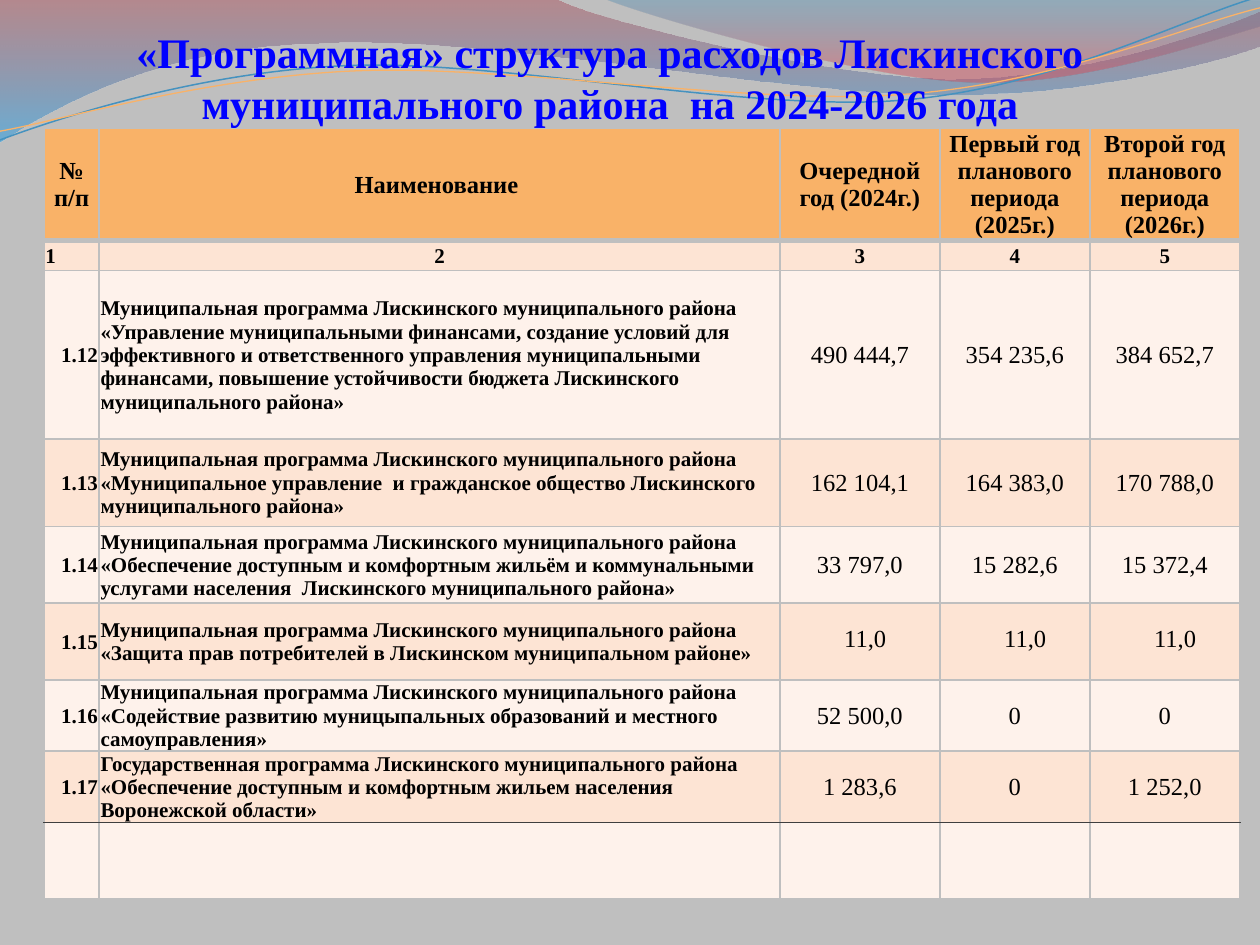
import math

import pptx
import pptx.dml.color
import pptx.enum.text
import pptx.oxml
import pptx.oxml.ns
import pptx.util

Pt = pptx.util.Pt
qn = pptx.oxml.ns.qn
ALIGN = pptx.enum.text.PP_ALIGN
ANCHOR = pptx.enum.text.MSO_ANCHOR
FONT = "Times New Roman"
GREY = "BFBFBF"
DARK = "3F3F3F"
BANDS = ("FDE4D4", "FEF2EB")
COLUMNS = (31.5, 389, 91.4, 85.7, 85.7)
ROWS = (64, 17.3, 96.2, 49.9, 43.9, 43.9, 13.7, 13.7, 43.9)
HEADER = ("№ п/п", "Наименование ", "Очередной год (2024г.)",
          "Первый год планового периода (2025г.)", "Второй год планового периода (2026г.)")
PROGRAM = "Муниципальная программа Лискинского муниципального района "
PROGRAMS = (
    ("1.12", PROGRAM + "«Управление муниципальными финансами, создание условий для эффективного и "
     "ответственного управления муниципальными финансами, повышение устойчивости бюджета "
     "Лискинского муниципального района»", "490 444,7", "354 235,6", "384 652,7"),
    ("1.13", PROGRAM + "«Муниципальное управление  и гражданское общество Лискинского "
     "муниципального района»", "162 104,1", "164 383,0", "170 788,0"),
    ("1.14", PROGRAM + "«Обеспечение доступным и комфортным жильём и коммунальными услугами "
     "населения  Лискинского муниципального района»", "33 797,0", "15 282,6", "15 372,4"),
    ("1.15", PROGRAM + "«Защита прав потребителей в Лискинском муниципальном районе»",
     "11,0", "11,0", "11,0"),
    ("1.16", PROGRAM + "«Содействие развитию муницыпальных образований и местного "
     "самоуправления»", "52 500,0", "0", "0"),
    ("1.17", "Государственная программа Лискинского муниципального района «Обеспечение "
     "доступным и комфортным жильем населения Воронежской области»", "1 283,6", "0", "1 252,0"),
)
BAND_WAVE = [[(0, 0)], [(317, -1)], [(343, 12), (478, 45), (546, 45)],
             [(614, 45), (690, 19), (720, 6.5)], [(721, 26)],
             [(708, 32), (626, 55), (537, 54)], [(448, 54), (275, 20), (185, 24.5)],
             [(93, 26), (33, 60), (-1, 81.5)], [(0, 0)]]
RIGHT_WAVE = [[(345, -1)], [(366, 8), (491, 45), (554, 47)],
              [(616, 50), (692, 23), (720, 15)], [(720, 0)], [(345, -1)]]
BLUE_LINE = [[(0, 80)], [(35, 67), (114, 41), (199, 37.5)],
             [(284, 34), (427, 64), (513, 57.5)], [(600, 51), (675, 11), (718.5, -1.5)]]
ORANGE_LINE = [[(0, 75)], [(34, 69), (118, 44), (204, 40.5)],
               [(290, 37), (430, 60.5), (516, 54)], [(602, 48), (677, 15), (720, 4.5)]]


def rgb(value):
    """Return the colour for a hex string."""
    return pptx.dml.color.RGBColor.from_string(value)


def turn(point, centre, degrees):
    """Turn a point clockwise about a centre."""
    a = math.radians(degrees)
    x, y = point[0] - centre[0], point[1] - centre[1]
    return (centre[0] + x * math.cos(a) - y * math.sin(a),
            centre[1] + x * math.sin(a) + y * math.cos(a))


def add_curve(s, outline, box, close, tilt=0):
    """Draw straight and cubic segments in a box, as a shape with the given tilt."""
    centre = (box[2] / 2, box[3] / 2)
    points = [turn(point, centre, -tilt) for seg in outline for point in seg]
    points = [(Pt(box[0] + x), Pt(box[1] + y)) for x, y in points]
    builder = s.shapes.build_freeform(*points[0])
    builder.add_line_segments(points[1:], close=close)
    sp = builder.convert_to_shape()
    sp.shadow.inherit = False
    sp.rotation = tilt % 360
    lines = iter(list(sp._element.iter(qn("a:lnTo"))))
    for seg in outline[1:]:
        nodes = [next(lines) for _ in seg]
        if len(seg) == 3:
            cubic = nodes[0].makeelement(qn("a:cubicBezTo"), {})
            nodes[0].addprevious(cubic)
            for node in nodes:
                cubic.append(node[0])
                node.getparent().remove(node)
    return sp


def add_waves(s, box):
    """Draw the two translucent waves and the two thin curves."""
    waves = ((BAND_WAVE, ((0, "A84752", 45), (1, "249FE6", 55))),
             (RIGHT_WAVE, ((0, "2A7EAF", 30), (0.8, "D24B5A", 45))))
    for outline, stops in waves:
        sp = add_curve(s, outline, box, True)
        sp.line.fill.background()
        sp.fill.gradient()
        sp.fill.gradient_angle = 270
        for stop, (position, colour, _) in zip(sp.fill.gradient_stops, stops):
            stop.position = position
            stop.color.rgb = rgb(colour)
        for node, (_, _, opacity) in zip(sp._element.iter(qn("a:srgbClr")), stops):
            node.append(node.makeelement(qn("a:alpha"), {"val": str(opacity * 1000)}))
    for outline, colour, width in ((BLUE_LINE, "4592BF", 0.85), (ORANGE_LINE, "F9B268", 0.75)):
        sp = add_curve(s, outline, box, False, -2.7)
        sp.fill.background()
        sp.line.color.rgb = rgb(colour)
        sp.line.width = Pt(width)


def add_run(p, text, size, colour, bold):
    """Add one formatted run to a paragraph."""
    r = p.add_run()
    r.text = text
    r.font.name = FONT
    r.font.size = Pt(size)
    r.font.bold = bold
    r.font.color.rgb = rgb(colour)


def place_title(s, box):
    """Place the title placeholder in front of the waves."""
    sp = s.shapes.title
    s.shapes._spTree.append(sp._element)
    sp.left, sp.top, sp.width, sp.height = (Pt(v) for v in box)
    tf = sp.text_frame
    tf.auto_size = pptx.enum.text.MSO_AUTO_SIZE.NONE
    tf.word_wrap = True
    tf.vertical_anchor = ANCHOR.BOTTOM
    tf.margin_left = tf.margin_right = tf.margin_bottom = 0
    tf.margin_top = Pt(3.6)
    p = tf.paragraphs[0]
    p.alignment = ALIGN.CENTER
    add_run(p, "«Программная» структура расходов Лискинского муниципального района  "
            "на 2024-2026 года", 24, "0000FF", True)


def style_cell(cell, fill, top, bottom):
    """Set the fill, margins and borders of a cell."""
    cell.margin_left = cell.margin_top = cell.margin_right = Pt(0.75)
    cell.margin_bottom = 0
    cell.vertical_anchor = ANCHOR.MIDDLE
    borders = (("L", GREY, 1), ("R", GREY, 1), ("T", *top), ("B", *bottom))
    for side, colour, width in borders:
        cell._tc.get_or_add_tcPr().append(pptx.oxml.parse_xml(
            f'<a:ln{side} {pptx.oxml.ns.nsdecls("a")} w="{Pt(width)}"><a:solidFill>'
            f'<a:srgbClr val="{colour}"/></a:solidFill></a:ln{side}>'))
    cell.fill.solid()
    cell.fill.fore_color.rgb = rgb(fill)


def fill_cell(cell, text, row, col):
    """Write the text of a cell by its row and column."""
    p = cell.text_frame.paragraphs[0]
    p.alignment = ALIGN.CENTER
    if row > 1 and col < 2:
        p.alignment = (ALIGN.RIGHT, ALIGN.LEFT)[col]
    elif (row, col) == (1, 0):
        p.alignment = ALIGN.LEFT
    elif text == "11,0":
        p.alignment = ALIGN.LEFT
        p.level = 1
        p._p.get_or_add_pPr().set("marL", str(Pt(36)))
        cell.vertical_anchor = ANCHOR.BOTTOM
        cell.margin_bottom = Pt(15.5)
    is_value = row > 1 and col > 1
    add_run(p, text, 14 if row == 0 or is_value else 12, "000000", not is_value)


def add_budget_table(s, box):
    """Add the table of programme spending."""
    rows = (HEADER, tuple("12345"), *PROGRAMS, ())
    frame = s.shapes.add_table(len(rows), len(COLUMNS), *(Pt(v) for v in box))
    table = frame.table
    for column, width in zip(table.columns, COLUMNS):
        column.width = Pt(width)
    edges = [(GREY, 1)] * (len(rows) + 1)
    edges[1] = (GREY, 3)
    edges[-2] = (DARK, 1)
    for i, texts in enumerate(rows):
        table.rows[i].height = Pt(ROWS[i])
        for j in range(len(COLUMNS)):
            cell = table.cell(i, j)
            style_cell(cell, BANDS[(i - 1) % 2] if i else "F9B268", edges[i], edges[i + 1])
            if texts:
                fill_cell(cell, texts[j], i, j)
    frame.height = Pt(box[3])


def main():
    """Build the slide and save it."""
    prs = pptx.Presentation()
    prs.slide_width, prs.slide_height = Pt(720), Pt(540)
    s = prs.slides.add_slide(prs.slide_layouts[5])
    s.background.fill.solid()
    s.background.fill.fore_color.rgb = rgb(GREY)
    add_waves(s, (0, 0, 720, 82))
    place_title(s, (16.5, 16.5, 664, 56.5))
    add_budget_table(s, (25.2, 73.4, sum(COLUMNS), 450.7))
    prs.save("out.pptx")


if __name__ == "__main__":
    main()
